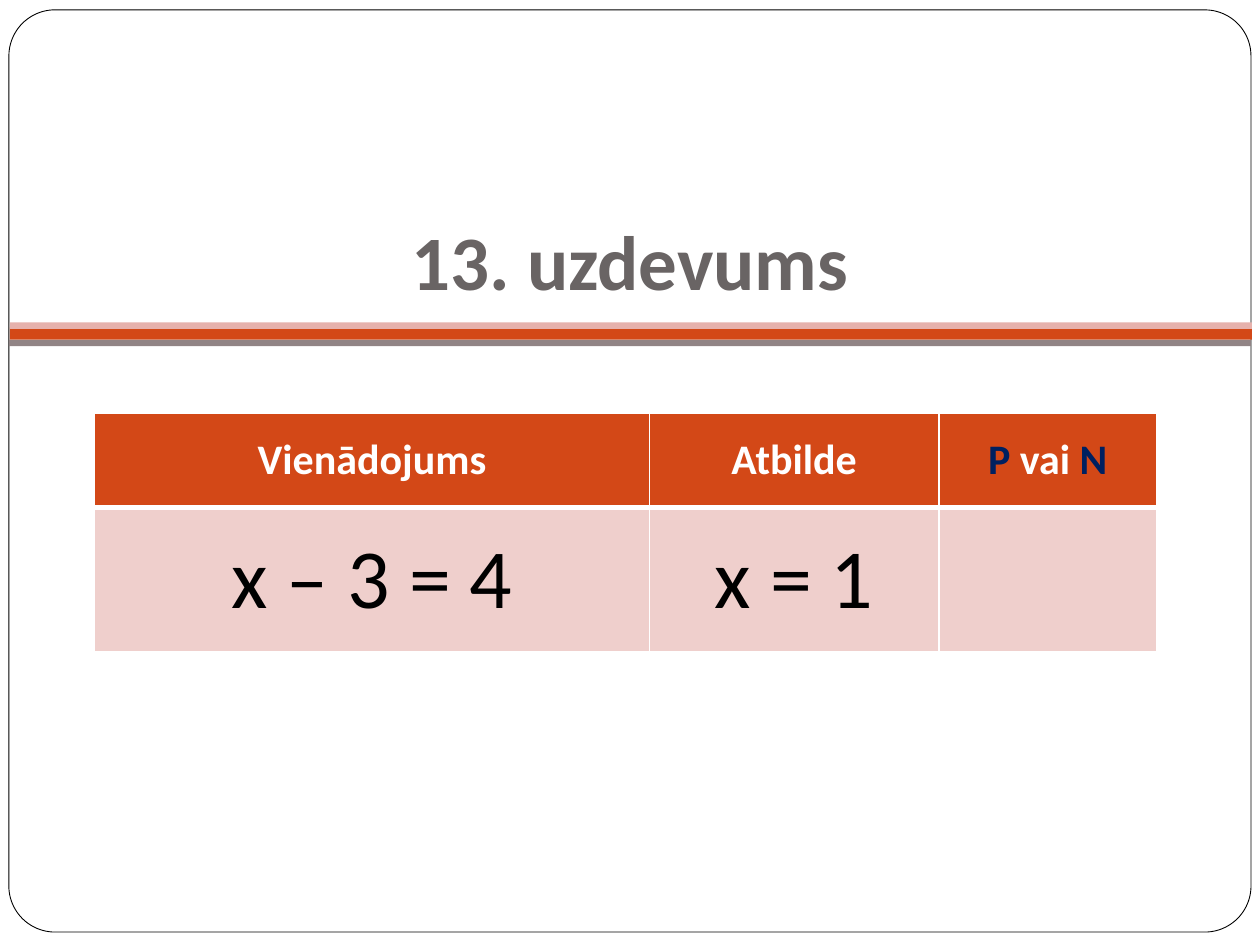
from typing import NamedTuple

from lxml.etree import SubElement
from pptx import Presentation
from pptx.dml.color import RGBColor
from pptx.enum.shapes import MSO_SHAPE
from pptx.enum.text import MSO_ANCHOR, MSO_AUTO_SIZE, PP_ALIGN
from pptx.oxml.ns import qn
from pptx.util import Cm, Pt

WHITE = RGBColor(0xFF, 0xFF, 0xFF)
BLACK = RGBColor(0x00, 0x00, 0x00)
GREY = RGBColor(0x69, 0x64, 0x64)
ORANGE = RGBColor(0xD3, 0x48, 0x17)
PINK = RGBColor(0xE6, 0xB1, 0xAC)
TAUPE = RGBColor(0x91, 0x84, 0x85)
PALE_PINK = RGBColor(0xEF, 0xCF, 0xCC)
NAVY = RGBColor(0x00, 0x20, 0x60)


class Band(NamedTuple):
    left: float
    top: float
    height: float
    color: RGBColor


class Span(NamedTuple):
    text: str
    color: RGBColor


class RowStyle(NamedTuple):
    height: float
    fill: RGBColor
    size: int
    bold: bool
    top_border: int
    bottom_border: int


BANDS = [
    Band(0.2, 6.6, 0.25, ORANGE),
    Band(0.2, 6.5, 0.13, PINK),
    Band(0.18, 6.85, 0.13, TAUPE),
]
BAND_WIDTH = 25.04
COLUMN_WIDTHS = [11.18, 5.84, 4.38]
ROW_STYLES = [
    RowStyle(1.9, ORANGE, 24, True, 1, 3),
    RowStyle(2.9, PALE_PINK, 48, False, 3, 1),
]
ROWS = [
    [
        [Span("Vienādojums", WHITE)],
        [Span("Atbilde", WHITE)],
        [Span("P ", NAVY), Span("vai ", WHITE), Span("N", NAVY)],
    ],
    [[Span("x – 3 = 4", BLACK)], [Span("x = 1", BLACK)], []],
]


def write_text(frame, spans: list[Span], *, size: int, bold: bool) -> None:
    paragraph = frame.paragraphs[0]
    paragraph.alignment = PP_ALIGN.CENTER
    paragraph.font.size = Pt(size)
    for span in spans:
        run = paragraph.add_run()
        run.text = span.text
        run.font.name = "Calibri"
        run.font.size = Pt(size)
        run.font.bold = bold
        run.font.color.rgb = span.color


def draw_frame(slide) -> None:
    frame = slide.shapes.add_shape(
        MSO_SHAPE.ROUNDED_RECTANGLE, Cm(0.18), Cm(0.2), Cm(25.04), Cm(18.59)
    )
    frame.adjustments[0] = 0.05
    frame.shadow.inherit = False
    frame.fill.solid()
    frame.fill.fore_color.rgb = WHITE
    frame.line.color.rgb = BLACK
    frame.line.width = Pt(0.5)


def draw_band(slide, band: Band) -> None:
    stripe = slide.shapes.add_shape(
        MSO_SHAPE.RECTANGLE, Cm(band.left), Cm(band.top), Cm(BAND_WIDTH), Cm(band.height)
    )
    stripe.shadow.inherit = False
    stripe.fill.solid()
    stripe.fill.fore_color.rgb = band.color
    stripe.line.fill.background()


def place_title(slide) -> None:
    title = slide.shapes.title
    title.left, title.top, title.width, title.height = Cm(0.1), Cm(2.64), Cm(25.2), Cm(3.78)
    frame = title.text_frame
    frame.auto_size = MSO_AUTO_SIZE.NONE
    frame.vertical_anchor = MSO_ANCHOR.BOTTOM
    frame.margin_bottom = Cm(0.25)
    write_text(frame, [Span("13. uzdevums", GREY)], size=44, bold=True)
    # Bring the title in front of the white frame.
    slide.shapes._spTree.append(title._element)


def set_borders(cell, top: int, bottom: int) -> None:
    properties = cell._tc.get_or_add_tcPr()
    for side, width in {"L": 1, "R": 1, "T": top, "B": bottom}.items():
        border = SubElement(properties, qn(f"a:ln{side}"), w=str(Pt(width)))
        SubElement(SubElement(border, qn("a:solidFill")), qn("a:srgbClr"), val=str(WHITE))


def draw_table(slide) -> None:
    table = slide.shapes.add_table(
        len(ROWS), len(COLUMN_WIDTHS), Cm(1.91), Cm(8.33),
        Cm(sum(COLUMN_WIDTHS)), Cm(sum(style.height for style in ROW_STYLES)),
    ).table
    for column, width in zip(table.columns, COLUMN_WIDTHS):
        column.width = Cm(width)
    for row, style, contents in zip(table.rows, ROW_STYLES, ROWS):
        row.height = Cm(style.height)
        for cell, spans in zip(row.cells, contents):
            set_borders(cell, style.top_border, style.bottom_border)
            cell.fill.solid()
            cell.fill.fore_color.rgb = style.fill
            cell.vertical_anchor = MSO_ANCHOR.MIDDLE
            write_text(cell.text_frame, spans, size=style.size, bold=style.bold)


def main() -> None:
    presentation = Presentation()
    presentation.slide_width, presentation.slide_height = Cm(25.4), Cm(19.05)
    slide = presentation.slides.add_slide(presentation.slide_layouts.get_by_name("Title Only"))
    draw_frame(slide)
    for band in BANDS:
        draw_band(slide, band)
    place_title(slide)
    draw_table(slide)
    presentation.save("out.pptx")


if __name__ == "__main__":
    main()
